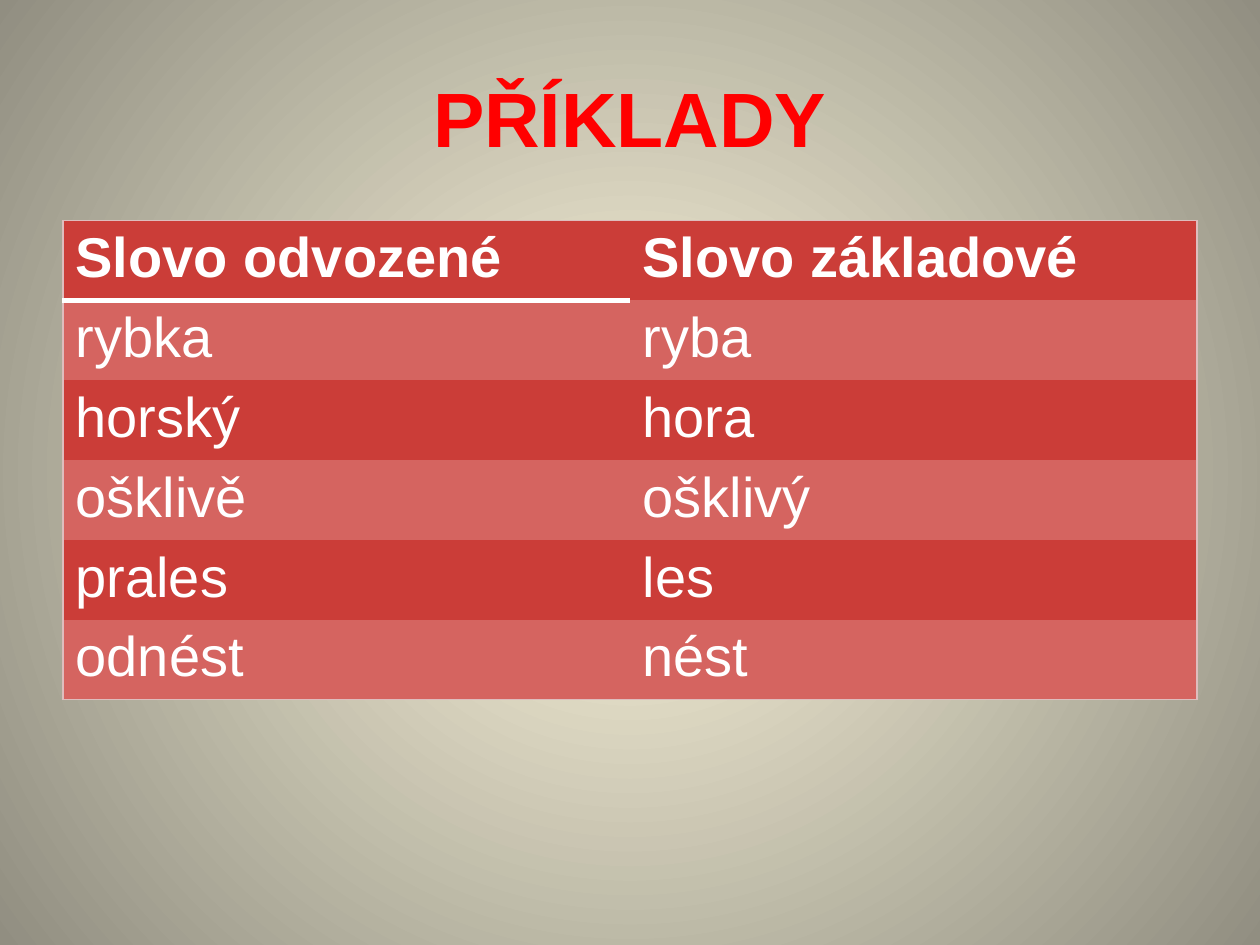
from lxml.etree import SubElement
from pptx import Presentation
from pptx.dml.color import RGBColor
from pptx.enum.text import MSO_ANCHOR, PP_ALIGN
from pptx.oxml.ns import qn
from pptx.util import Inches, Pt

CREAM = RGBColor(0xFC, 0xF7, 0xDD)
TAUPE = RGBColor(0x91, 0x8E, 0x81)
RED = RGBColor(0xFF, 0x00, 0x00)
WHITE = RGBColor(0xFF, 0xFF, 0xFF)
BRICK = RGBColor(0xCB, 0x3D, 0x38)
ROSE = RGBColor(0xD5, 0x64, 0x60)
PALE = RGBColor(0xDE, 0xBD, 0xBD)

ROWS = [
    ("Slovo odvozené", "Slovo základové"),
    ("rybka", "ryba"),
    ("horský", "hora"),
    ("ošklivě", "ošklivý"),
    ("prales", "les"),
    ("odnést", "nést"),
]
TITLE_FORMAT = {"name": "Arial", "size": Pt(44), "bold": True}
CELL_FORMAT = {"name": "Arial", "size": Pt(32)}


def write(para, text, color, formats):
    span = para.add_run()
    span.text = text
    span.font.color.rgb = color
    for key, value in formats.items():
        setattr(span.font, key, value)


def draw_borders(cell, borders):
    properties = cell._tc.get_or_add_tcPr()
    for position, (side, (color, width)) in enumerate(borders.items()):
        line = properties.makeelement(qn(f"a:ln{side}"), {"w": str(Pt(width))})
        properties.insert(position, line)
        if color is None:
            SubElement(line, qn("a:noFill"))
        else:
            fill = SubElement(line, qn("a:solidFill"))
            SubElement(fill, qn("a:srgbClr"), val=str(color))


deck = Presentation()
deck.slide_width = Inches(10)
deck.slide_height = Inches(7.5)
page = deck.slides.add_slide(deck.slide_layouts[6])

background = page.background.fill
background.gradient()
for stop, color, position in zip(background.gradient_stops, (CREAM, TAUPE), (0, 1)):
    stop.color.rgb = color
    stop.position = position
gradient = page._element.find(".//" + qn("a:gradFill"))
gradient.remove(gradient.find(qn("a:lin")))
circle = SubElement(gradient, qn("a:path"), {"path": "circle"})
SubElement(circle, qn("a:fillToRect"), dict.fromkeys("ltrb", "50000"))

title = page.shapes.add_textbox(Inches(0.5), Inches(0.3), Inches(9), Inches(1.25))
title.text_frame.word_wrap = True
title.text_frame.vertical_anchor = MSO_ANCHOR.MIDDLE
para = title.text_frame.paragraphs[0]
para.alignment = PP_ALIGN.CENTER
write(para, "PŘÍKLADY", RED, TITLE_FORMAT)

table = page.shapes.add_table(
    len(ROWS), 2, Inches(0.5), Inches(1.75), Inches(9), Inches(0.6 * len(ROWS))
).table
for row, words in enumerate(ROWS):
    for column, word in enumerate(words):
        cell = table.cell(row, column)
        cell.fill.solid()
        cell.fill.fore_color.rgb = ROSE if row % 2 else BRICK
        write(cell.text_frame.paragraphs[0], word, WHITE, CELL_FORMAT | {"bold": row == 0})

        borders = dict.fromkeys("LRTB", (None, 0))
        borders["R" if column else "L"] = (PALE, 0.75)
        if row == 0:
            borders["T"] = (PALE, 0.75)
        if row == len(ROWS) - 1:
            borders["B"] = (PALE, 0.75)
        if column == 0 and row < 2:
            borders["T" if row else "B"] = (WHITE, 3)
        draw_borders(cell, borders)

deck.save("out.pptx")
